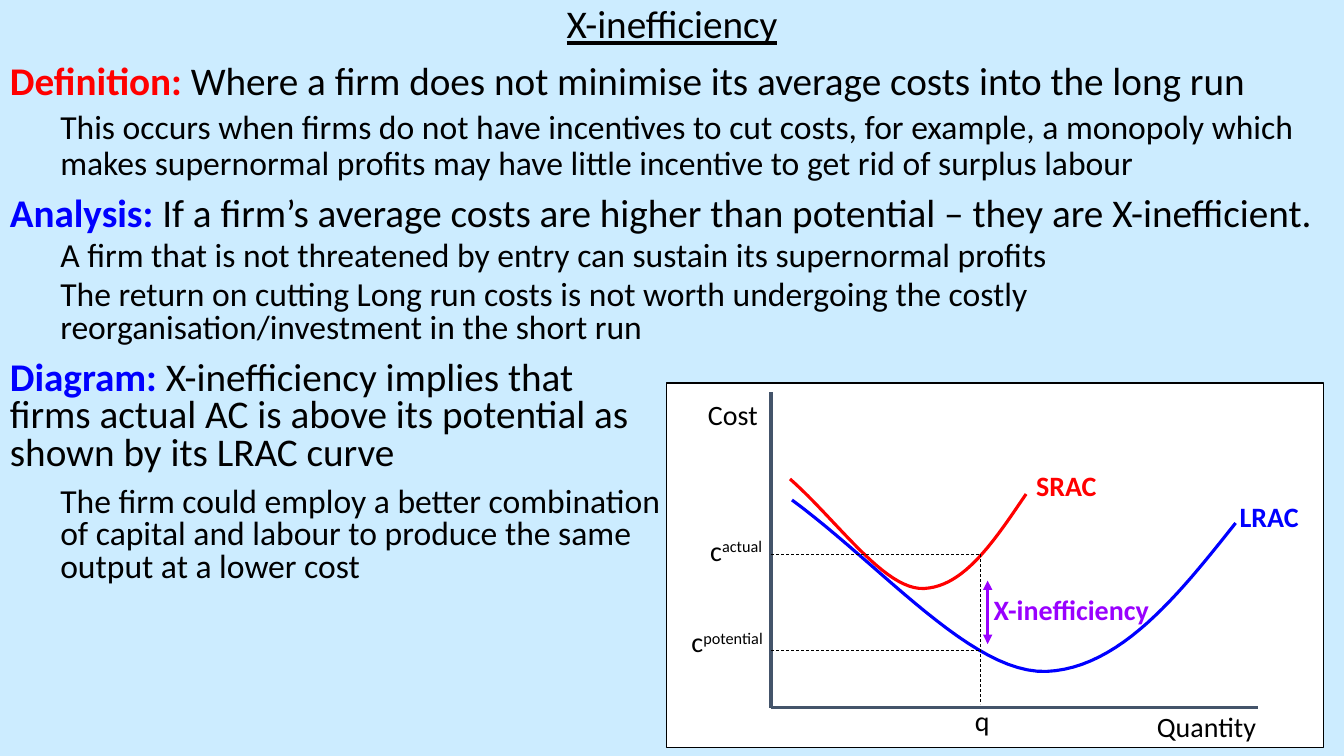
from dataclasses import dataclass
from typing import Optional

from lxml import etree
from pptx import Presentation
from pptx import util as u
from pptx.dml.color import RGBColor
from pptx.enum import dml, shapes, text
from pptx.oxml.ns import qn

COLOURS = {
    "background": "CCECFF",
    "white": "FFFFFF",
    "black": "000000",
    "red": "FF0000",
    "blue": "0000FF",
    "purple": "9900FF",
    "axis": "44546A",
}
FONT = "Calibri"
HEADING, DETAIL, LABEL = 28, 24, 20
CENTRE = text.PP_ALIGN.CENTER
CURVE_STEPS = 24
Point = tuple[float, float]

ORIGIN_X, ORIGIN_Y = 19.43, 17.83
QUANTITY_X = 24.71
ACTUAL_Y, POTENTIAL_Y = 13.97, 16.38
GAP_X = 24.89


@dataclass
class Line:
    words: str
    lead: str = ""
    lead_colour: str = "black"
    size: int = HEADING
    spacing: Optional[float] = None
    before: float = 0
    indented: bool = False
    colour: str = "black"
    bold: bool = False
    underline: bool = False
    centred: bool = False
    superscript: str = ""


@dataclass
class Box:
    left: float
    top: float
    width: float
    height: float
    lines: list[Line]


@dataclass
class Stroke:
    start: Point
    end: Point
    colour: str
    width: float
    dashed: bool = False
    arrows: bool = False


@dataclass
class Curve:
    colour: str
    points: list[Point]


BODY = Box(0, 0, 33.87, 9.22, [
    Line("X-inefficiency", spacing=0.9, before=10, underline=True, centred=True),
    Line("Where a firm does not minimise its average costs into the long run",
         "Definition: ", "red", spacing=0.9, before=10),
    Line("This occurs when firms do not have incentives to cut costs, for example, a monopoly "
         "which makes supernormal profits may have little incentive to get rid of surplus labour",
         size=DETAIL, spacing=0.9, before=5, indented=True),
    Line("If a firm’s average costs are higher than potential – they are X-inefficient.",
         "Analysis: ", "blue", spacing=0.8, before=10),
    Line("A firm that is not threatened by entry can sustain its supernormal profits",
         size=DETAIL, spacing=0.8, before=5, indented=True),
    Line("The return on cutting Long run costs is not worth undergoing the costly "
         "reorganisation/investment in the short run",
         size=DETAIL, spacing=0.8, before=5, indented=True),
])
EXPLANATION = Box(0, 8.97, 16.89, 10.08, [
    Line("X-inefficiency implies that firms actual AC is above its potential as shown by its "
         "LRAC curve", "Diagram: ", "blue", spacing=0.8, before=10),
    Line("The firm could employ a better combination of capital and labour to produce the same "
         "output at a lower cost", size=DETAIL, spacing=0.8, before=10, indented=True),
])
STROKES = [
    Stroke((ORIGIN_X, 9.88), (ORIGIN_X, ORIGIN_Y), "axis", 2.25),
    Stroke((ORIGIN_X, ORIGIN_Y), (31.7, ORIGIN_Y), "axis", 2.25),
    Stroke((QUANTITY_X, ACTUAL_Y), (QUANTITY_X, 17.75), "black", 0.5, dashed=True),
    Stroke((ORIGIN_X, POTENTIAL_Y), (QUANTITY_X, POTENTIAL_Y), "black", 0.5, dashed=True),
    Stroke((ORIGIN_X, ACTUAL_Y), (QUANTITY_X, ACTUAL_Y), "black", 0.5, dashed=True),
    Stroke((GAP_X, 14.63), (GAP_X, 16.23), "purple", 2.25, arrows=True),
]
CURVES = [
    Curve("red", [(25.86, 12.45), (25.07, 13.61), (24.31, 14.78), (23.29, 14.83),
                  (22.3, 14.88), (21.11, 13.13), (19.91, 12.07)]),
    Curve("blue", [(31.14, 13.18), (29.69, 15.01), (28.22, 16.84), (26.37, 16.92),
                   (24.51, 16.99), (22.23, 14.27), (19.96, 12.6)]),
]
LABELS = [
    Box(28.4, 17.75, 4.01, 1, [Line("Quantity", size=LABEL, centred=True)]),
    Box(16.97, 9.88, 3, 1, [Line("Cost", size=LABEL, centred=True)]),
    Box(25.86, 11.68, 3.48, 1.12, [Line("SRAC", size=LABEL, colour="red", bold=True)]),
    Box(30.99, 12.45, 2.88, 1.12, [Line("LRAC", size=LABEL, colour="blue", bold=True)]),
    Box(24.79, 14.81, 4.95, 1.12,
        [Line("X-inefficiency", size=LABEL, colour="purple", bold=True)]),
    Box(23.37, 17.6, 2.77, 1.12, [Line("q", size=LABEL, centred=True)]),
    Box(16.94, 15.62, 2.77, 1.12,
        [Line("c", size=LABEL, centred=True, superscript="potential")]),
    Box(17.17, 13.31, 2.77, 1.12,
        [Line("c", size=LABEL, centred=True, superscript="actual")]),
]


def rgb(name: str) -> RGBColor:
    return RGBColor.from_string(COLOURS[name])


def write_line(paragraph, line: Line) -> None:
    font = paragraph.font
    font.name, font.size = FONT, u.Pt(line.size)
    font.underline = line.underline
    paragraph.space_before = u.Pt(line.before)
    if line.spacing:
        paragraph.line_spacing = line.spacing
    if line.centred:
        paragraph.alignment = CENTRE
    if line.indented:
        paragraph.level = 1
        properties = paragraph._p.get_or_add_pPr()
        properties.set("marL", str(u.Cm(1.27)))
        properties.set("indent", "0")
    if line.lead:
        lead = paragraph.add_run()
        lead.text = line.lead
        lead.font.bold = True
        lead.font.color.rgb = rgb(line.lead_colour)
        words = paragraph.add_run()
        words.text = line.words
        words.font.color.rgb = rgb(line.colour)
    else:
        font.bold = line.bold
        font.color.rgb = rgb(line.colour)
        paragraph.add_run().text = line.words
    if line.superscript:
        raised = paragraph.add_run()
        raised.text = line.superscript
        raised.font._element.set("baseline", "30000")


def add_box(parent, box: Box) -> None:
    shape = parent.add_textbox(u.Cm(box.left), u.Cm(box.top), u.Cm(box.width), u.Cm(box.height))
    frame = shape.text_frame
    frame.word_wrap = True
    for index, line in enumerate(box.lines):
        write_line(frame.add_paragraph() if index else frame.paragraphs[0], line)


def add_stroke(parent, stroke: Stroke) -> None:
    ends = [u.Cm(value) for value in stroke.start + stroke.end]
    connector = parent.add_connector(shapes.MSO_CONNECTOR.STRAIGHT, *ends)
    connector.line.color.rgb = rgb(stroke.colour)
    connector.line.width = u.Pt(stroke.width)
    if stroke.dashed:
        connector.line.dash_style = dml.MSO_LINE.DASH
    if stroke.arrows:
        for tag in ("a:headEnd", "a:tailEnd"):
            etree.SubElement(connector.line._get_or_add_ln(), qn(tag), type="triangle")
    etree.SubElement(connector._element.spPr, qn("a:effectLst"))


def bezier(points: list[Point], t: float) -> Point:
    weights = ((1 - t) ** 3, 3 * t * (1 - t) ** 2, 3 * t ** 2 * (1 - t), t ** 3)
    x, y = (sum(w * p[axis] for w, p in zip(weights, points)) for axis in (0, 1))
    return u.Cm(x), u.Cm(y)


def add_curve(parent, curve: Curve) -> None:
    trace = [bezier(curve.points[first:first + 4], step / CURVE_STEPS)
             for first in range(0, len(curve.points) - 1, 3)
             for step in range(1, CURVE_STEPS + 1)]
    builder = parent.build_freeform(*bezier(curve.points[:4], 0))
    builder.add_line_segments(trace, close=False)
    shape = builder.convert_to_shape()
    shape.shadow.inherit = False
    shape.fill.background()
    shape.line.color.rgb = rgb(curve.colour)
    shape.line.width = u.Pt(2.25)


def add_diagram(parent) -> None:
    panel = parent.add_shape(shapes.MSO_SHAPE.RECTANGLE,
                             u.Cm(16.79), u.Cm(9.65), u.Cm(16.56), u.Cm(9.19))
    panel.shadow.inherit = False
    panel.fill.solid()
    panel.fill.fore_color.rgb = rgb("white")
    panel.line.color.rgb = rgb("black")
    panel.line.width = u.Pt(1)
    for curve in CURVES:
        add_curve(parent, curve)
    for stroke in STROKES:
        add_stroke(parent, stroke)
    for label in LABELS:
        add_box(parent, label)


def main() -> None:
    presentation = Presentation()
    presentation.slide_width, presentation.slide_height = u.Cm(33.87), u.Cm(19.05)
    slide = presentation.slides.add_slide(presentation.slide_layouts[6])
    slide.background.fill.solid()
    slide.background.fill.fore_color.rgb = rgb("background")
    add_box(slide.shapes, BODY)
    add_box(slide.shapes, EXPLANATION)
    add_diagram(slide.shapes.add_group_shape().shapes)
    presentation.save("out.pptx")


if __name__ == "__main__":
    main()
